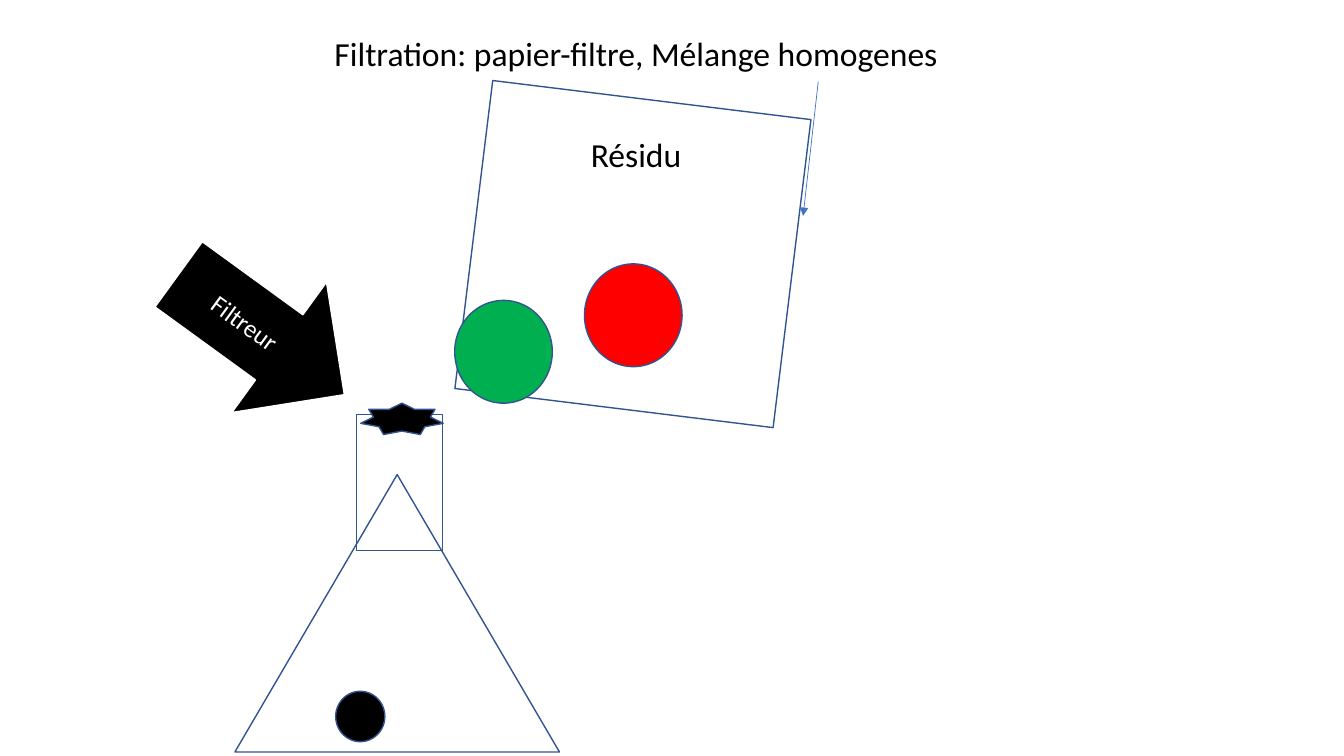
from dataclasses import dataclass
from typing import Optional

from lxml import etree
from pptx import Presentation
from pptx import util as u
from pptx.dml.color import RGBColor
from pptx.enum import shapes, text
from pptx.oxml import ns

BLACK = RGBColor(0x00, 0x00, 0x00)
WHITE = RGBColor(0xFF, 0xFF, 0xFF)
GREEN = RGBColor(0x00, 0xB0, 0x50)
RED = RGBColor(0xFF, 0x00, 0x00)
OUTLINE = RGBColor(0x32, 0x54, 0x91)
POINTER = RGBColor(0x44, 0x72, 0xC4)
FONT = "Calibri"
KIND = shapes.MSO_SHAPE


@dataclass
class Figure:
    kind: shapes.MSO_SHAPE
    left: float
    top: float
    width: float
    height: float
    fill: Optional[RGBColor] = None
    line: RGBColor = OUTLINE
    rotation: float = 0
    label: str = ""


# Lengths in centimetres, from back to front
RESIDUE_FIGURES = [
    Figure(KIND.RECTANGLE, 12.04, 2.36, 7.82, 8.08, rotation=277),
    Figure(KIND.OVAL, 11.46, 7.57, 2.46, 2.59, GREEN),
    Figure(KIND.OVAL, 8.46, 17.42, 1.24, 1.27, BLACK),
    Figure(KIND.OVAL, 14.73, 6.65, 2.46, 2.59, RED),
]
FLASK_FIGURES = [
    Figure(KIND.ISOSCELES_TRIANGLE, 5.92, 11.96, 8.18, 6.99),
    Figure(KIND.RECTANGLE, 8.99, 10.44, 2.16, 3.43),
    Figure(KIND.STAR_7_POINT, 9.09, 10.16, 2.08, 0.79, BLACK),
    Figure(KIND.RIGHT_ARROW, 4.01, 6.4, 5.16, 4.06, BLACK, WHITE, 36, "Filtreur"),
]


def style_paragraph(paragraph, size: float, color: RGBColor) -> None:
    paragraph.alignment = text.PP_ALIGN.CENTER
    paragraph.font.name = FONT
    paragraph.font.size = u.Pt(size)
    paragraph.font.color.rgb = color


def draw_figure(slide, figure: Figure) -> None:
    shape = slide.shapes.add_shape(
        figure.kind, u.Cm(figure.left), u.Cm(figure.top),
        u.Cm(figure.width), u.Cm(figure.height))
    shape.shadow.inherit = False
    shape.rotation = figure.rotation
    shape.line.color.rgb = figure.line
    shape.line.width = u.Pt(1)
    if figure.fill is None:
        shape.fill.background()
    else:
        shape.fill.solid()
        shape.fill.fore_color.rgb = figure.fill
    if figure.label:
        shape.text_frame.text = figure.label
        shape.text_frame.vertical_anchor = text.MSO_ANCHOR.MIDDLE
        style_paragraph(shape.text_frame.paragraphs[0], 18, WHITE)


def draw_headings(slide) -> None:
    box = slide.shapes.add_textbox(u.Cm(3.33), u.Cm(0.81), u.Cm(25.4), u.Cm(4.6))
    frame = box.text_frame
    frame.word_wrap = True
    frame.text = "Filtration: papier-filtre, Mélange homogenes\nRésidu"
    for paragraph in frame.paragraphs:
        paragraph.line_spacing = 0.9
        style_paragraph(paragraph, 24, BLACK)
    frame.paragraphs[1].space_before = u.Pt(46.4)


def draw_pointer(slide) -> None:
    pointer = slide.shapes.add_connector(
        shapes.MSO_CONNECTOR.STRAIGHT,
        u.Cm(20.62), u.Cm(2.06), u.Cm(20.24), u.Cm(5.44))
    pointer.line.color.rgb = POINTER
    pointer.line.width = u.Pt(0.5)
    etree.SubElement(pointer.line._get_or_add_ln(), ns.qn("a:tailEnd"), type="triangle")
    etree.SubElement(pointer._element.spPr, ns.qn("a:effectLst"))


def main() -> None:
    presentation = Presentation()
    presentation.slide_width = u.Cm(33.87)
    presentation.slide_height = u.Cm(19.05)
    slide = presentation.slides.add_slide(presentation.slide_layouts[6])

    # Title and residue heading
    draw_headings(slide)

    # Residue container and particles
    for figure in RESIDUE_FIGURES:
        draw_figure(slide, figure)
    draw_pointer(slide)

    # Flask, filter and its label arrow
    for figure in FLASK_FIGURES:
        draw_figure(slide, figure)

    presentation.save("out.pptx")


if __name__ == "__main__":
    main()
